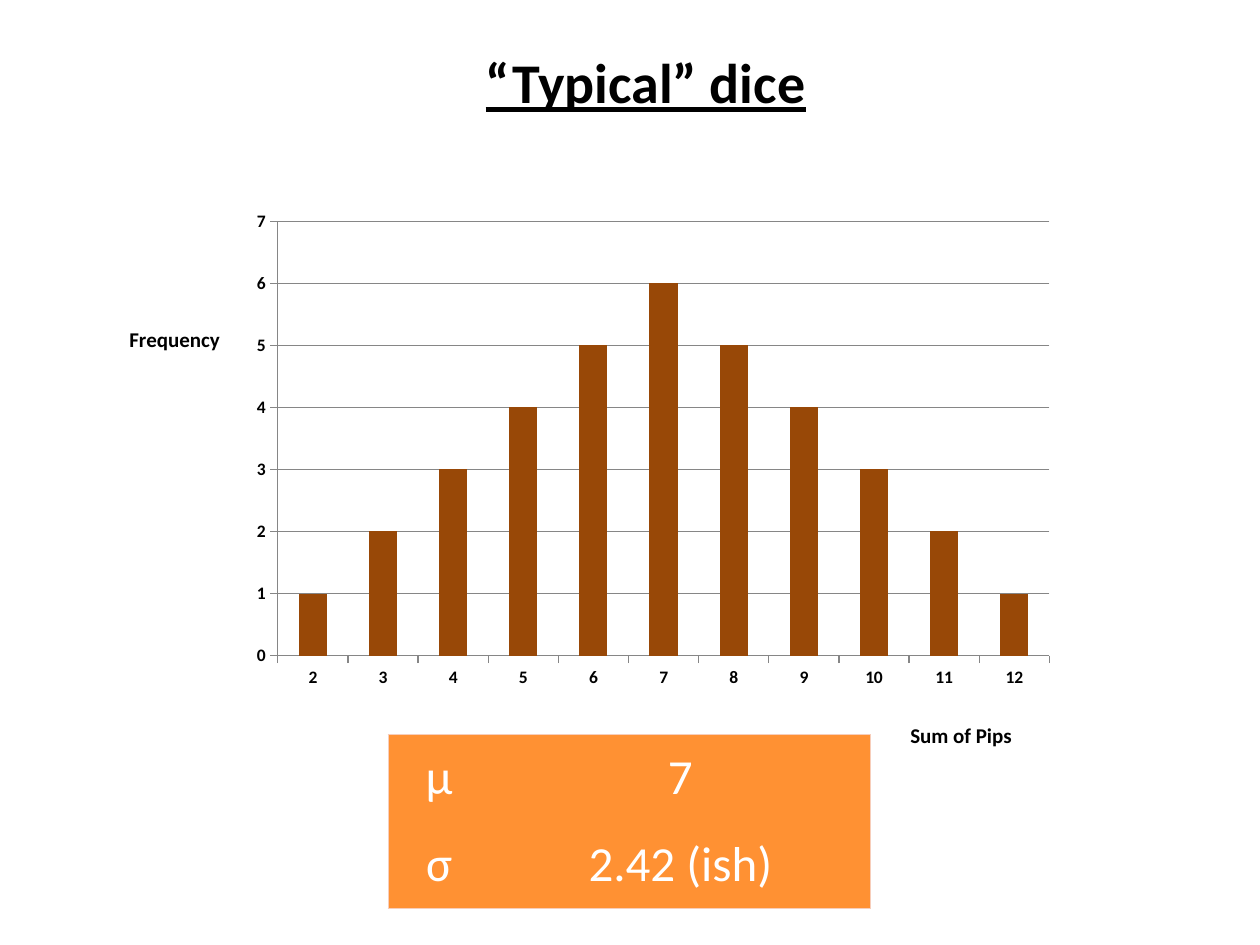
from pptx import Presentation
from pptx.chart.data import CategoryChartData
from pptx.dml.color import RGBColor
from pptx.enum.chart import XL_CHART_TYPE as ChartType, XL_TICK_MARK as TickMark
from pptx.enum.text import MSO_ANCHOR as Anchor, MSO_AUTO_SIZE as AutoSize, PP_ALIGN as Align
from pptx.oxml.ns import qn
from pptx.util import Inches, Pt
from lxml.etree import SubElement, Element

BLACK = RGBColor(0x00, 0x00, 0x00)
WHITE = RGBColor(0xFF, 0xFF, 0xFF)
BROWN = RGBColor(0x98, 0x48, 0x07)
ORANGE = RGBColor(0xFF, 0x91, 0x33)
PEACH = RGBColor(0xF7, 0xCE, 0xBB)
GRAY = RGBColor(0x86, 0x86, 0x86)
FONT = "Calibri"
STATISTICS = [("μ", "7"), ("σ", "2.42 (ish)")]


def add_run(paragraph, text, size, color, bold=False, underline=False):
    run = paragraph.add_run()
    run.text = text
    font = run.font
    font.name, font.size, font.bold, font.underline = FONT, Pt(size), bold, underline
    font.color.rgb = color


def set_title(slide):
    title = slide.shapes.title
    title.left, title.top = Inches(0.5), Inches(0.33)
    title.width, title.height = Inches(9.25), Inches(0.75)
    frame = title.text_frame
    frame.auto_size = AutoSize.NONE
    frame.vertical_anchor = Anchor.TOP
    paragraph = frame.paragraphs[0]
    paragraph.alignment = Align.CENTER
    add_run(paragraph, "“Typical” dice", 32, BLACK, bold=True, underline=True)


def set_layout(parent, index, **settings):
    for old_layout in parent.findall(qn("c:layout")):
        parent.remove(old_layout)
    layout = Element(qn("c:layout"))
    manual = SubElement(layout, qn("c:manualLayout"))
    for name, value in settings.items():
        SubElement(manual, qn(f"c:{name}")).set("val", str(value))
    parent.insert(index, layout)


def style_axis(axis, title, x, y):
    axis.major_tick_mark = TickMark.OUTSIDE
    axis.minor_tick_mark = TickMark.NONE
    axis.format.line.color.rgb = GRAY
    axis.tick_labels.font.size = Pt(10)
    axis.tick_labels.font.bold = True
    axis_title = axis.axis_title
    frame = axis_title.text_frame
    add_run(frame.paragraphs[0], title, 12, BLACK, bold=True)
    body = axis_title.element.find(".//" + qn("a:bodyPr"))
    body.set("rot", "0")
    body.set("vert", "horz")
    set_layout(axis_title.element, 1, xMode="edge", yMode="edge", x=x, y=y)


def add_frequency_chart(slide):
    data = CategoryChartData()
    sums = range(2, 13)
    data.categories = [str(pips) for pips in sums]
    data.add_series("Series 1", [6 - abs(pips - 7) for pips in sums])
    chart = slide.shapes.add_chart(
        ChartType.COLUMN_CLUSTERED, Inches(0.92), Inches(1.58), Inches(7.56), Inches(4.42), data
    ).chart
    chart.has_legend = False
    chart.has_title = False
    chart.font.name, chart.font.size = FONT, Pt(10)
    chart.font.color.rgb = BLACK
    plot = chart.plots[0]
    plot.gap_width = 150
    plot.vary_by_categories = False
    fill = plot.series[0].format.fill
    fill.solid()
    fill.fore_color.rgb = BROWN
    style_axis(chart.category_axis, "Sum of Pips", 0.83, 0.93)
    value_axis = chart.value_axis
    style_axis(value_axis, "Frequency", 0.01, 0.22)
    value_axis.minimum_scale, value_axis.maximum_scale, value_axis.major_unit = 0, 7, 1
    value_axis.major_gridlines.format.line.color.rgb = GRAY
    plot_area = chart.element.find(".//" + qn("c:plotArea"))
    set_layout(plot_area, 0, layoutTarget="inner", xMode="edge", yMode="edge",
               x=0.17, y=0.04, w=0.81, h=0.78)


def set_borders(cell, visible_sides):
    properties = cell._tc.get_or_add_tcPr()
    for side in "LRTB":
        line = SubElement(properties, qn(f"a:ln{side}"), w=str(Pt(0.75)))
        if side in visible_sides:
            fill = SubElement(line, qn("a:solidFill"))
            SubElement(fill, qn("a:srgbClr"), val=str(PEACH))
        else:
            SubElement(line, qn("a:noFill"))


def fill_cell(cell, text, visible_sides):
    set_borders(cell, visible_sides)
    cell.fill.solid()
    cell.fill.fore_color.rgb = ORANGE
    cell.margin_left = cell.margin_right = cell.margin_top = cell.margin_bottom = 0
    cell.vertical_anchor = Anchor.MIDDLE
    paragraph = cell.text_frame.paragraphs[0]
    paragraph.alignment = Align.CENTER
    add_run(paragraph, text, 28, WHITE)


def add_statistics_table(slide):
    table = slide.shapes.add_table(
        2, 2, Inches(3.08), Inches(5.83), Inches(3.83), Inches(1.38)
    ).table
    table.first_row = table.horz_banding = False
    table.columns[0].width, table.columns[1].width = Inches(0.81), Inches(3.02)
    for row, values in enumerate(STATISTICS):
        for column, text in enumerate(values):
            fill_cell(table.cell(row, column), text, "TB"[row] + "LR"[column])


def main():
    presentation = Presentation()
    presentation.slide_width, presentation.slide_height = Inches(10), Inches(7.5)
    slide = presentation.slides.add_slide(presentation.slide_layouts[5])
    set_title(slide)
    add_frequency_chart(slide)
    add_statistics_table(slide)
    presentation.save("out.pptx")


if __name__ == "__main__":
    main()
